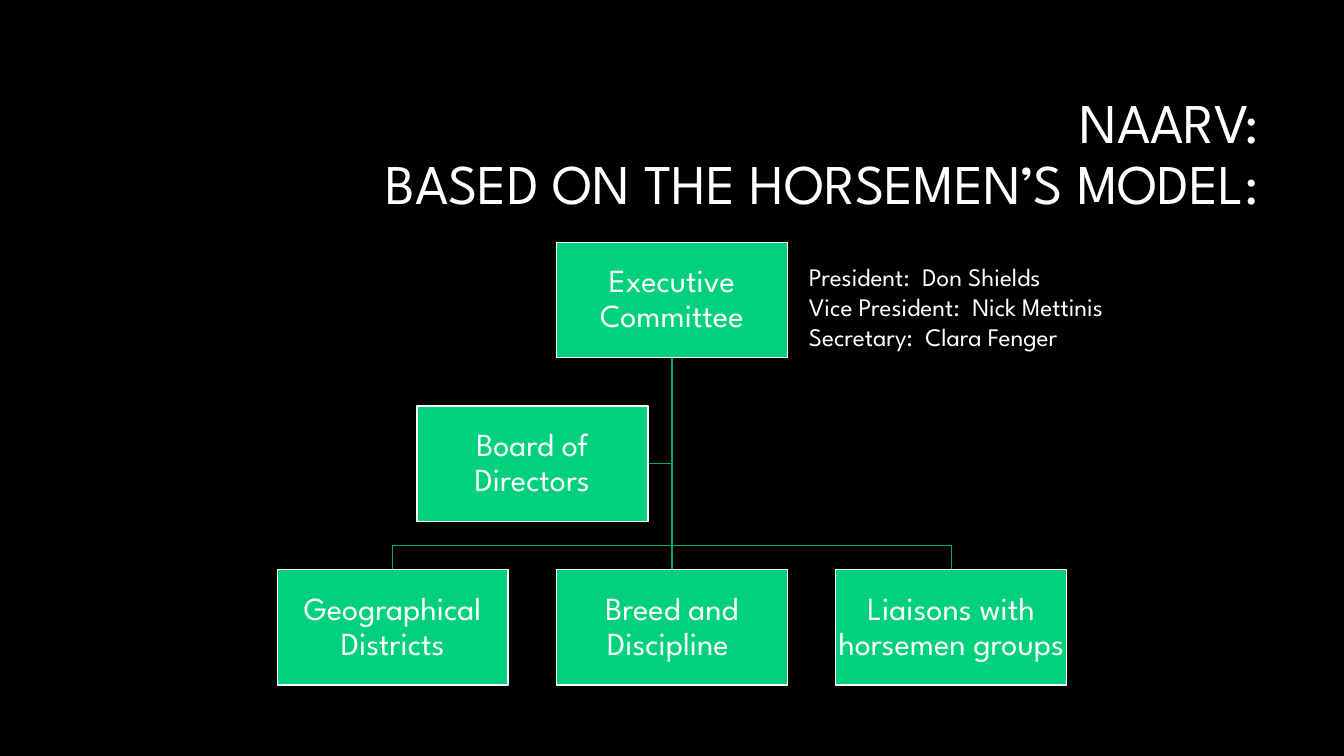
from dataclasses import dataclass

import pptx
import pptx.dml.color
import pptx.enum.shapes
import pptx.enum.text
import pptx.oxml.ns
import pptx.util
from lxml import etree
from pptx.shapes.base import BaseShape
from pptx.slide import Slide
from pptx.text.text import TextFrame

Pt = pptx.util.Pt
ALIGN = pptx.enum.text.PP_ALIGN
ANCHOR = pptx.enum.text.MSO_ANCHOR

COLORS = {"background": "000000", "box": "01D17D", "line": "01A764", "text": "FFFFFF"}
FONT = "League Spartan"

# Chart grid, in points
BOX_WIDTH, BOX_HEIGHT = 165, 82.4
CENTER_X, COLUMN_STEP = 480, 199.5
TOP_Y, ROW_STEP = 173, 117
BRANCH_RISE = 17.3


@dataclass(frozen=True)
class Box:
    text: str
    column: float
    row: int

    @property
    def center_x(self) -> float:
        return CENTER_X + self.column * COLUMN_STEP

    @property
    def left(self) -> float:
        return self.center_x - BOX_WIDTH / 2

    @property
    def top(self) -> float:
        return TOP_Y + self.row * ROW_STEP


COMMITTEE = Box("Executive Committee", 0, 0)
BOARD = Box("Board of Directors", -0.5, 1)
GROUPS = [
    Box("Geographical Districts", -1, 2),
    Box("Breed and Discipline ", 0, 2),
    Box("Liaisons with horsemen groups", 1, 2),
]
OFFICERS = [
    "President:  Don Shields",
    "Vice President:  Nick Mettinis",
    "Secretary:  Clara Fenger",
]


def color(name: str) -> pptx.dml.color.RGBColor:
    return pptx.dml.color.RGBColor.from_string(COLORS[name])


def write(frame: TextFrame, paragraphs: list[str], size: float, align: ALIGN,
          spacing: float = 1.0) -> None:
    """Fill a text frame; a newline inside a paragraph becomes a line break."""
    frame.word_wrap = True
    for index, text in enumerate(paragraphs):
        paragraph = frame.paragraphs[0] if index == 0 else frame.add_paragraph()
        paragraph.alignment = align
        paragraph.line_spacing = spacing
        for line_index, line in enumerate(text.split("\n")):
            if line_index:
                paragraph.add_line_break()
            run = paragraph.add_run()
            run.text = line
            run.font.name = FONT
            run.font.size = Pt(size)
            run.font.color.rgb = color("text")


def draw_line(slide: Slide, points: list[tuple[float, float]]) -> None:
    """Draw a straight connector, or an open outline when the line bends."""
    line: BaseShape
    if len(points) == 2:
        (x1, y1), (x2, y2) = points
        line = slide.shapes.add_connector(
            pptx.enum.shapes.MSO_CONNECTOR.STRAIGHT, Pt(x1), Pt(y1), Pt(x2), Pt(y2))
        etree.SubElement(line._element.spPr, pptx.oxml.ns.qn("a:effectLst"))
    else:
        corners = [(Pt(x), Pt(y)) for x, y in points]
        builder = slide.shapes.build_freeform(*corners[0])
        builder.add_line_segments(corners[1:], close=False)
        line = builder.convert_to_shape()
        line.shadow.inherit = False
        line.fill.background()
    line.line.color.rgb = color("line")
    line.line.width = Pt(1)


def draw_box(slide: Slide, box: Box) -> None:
    shape = slide.shapes.add_shape(
        pptx.enum.shapes.MSO_SHAPE.RECTANGLE,
        Pt(box.left), Pt(box.top), Pt(BOX_WIDTH), Pt(BOX_HEIGHT))
    shape.shadow.inherit = False
    shape.fill.solid()
    shape.fill.fore_color.rgb = color("box")
    shape.line.color.rgb = color("text")
    shape.line.width = Pt(1)
    frame = shape.text_frame
    frame.margin_left = frame.margin_right = Pt(1.2)
    frame.margin_top = frame.margin_bottom = Pt(1.2)
    frame.vertical_anchor = ANCHOR.MIDDLE
    write(frame, [box.text], 23, ALIGN.CENTER, 0.9)


def main() -> None:
    presentation = pptx.Presentation()
    presentation.slide_width = Pt(960)
    presentation.slide_height = Pt(540)
    slide = presentation.slides.add_slide(presentation.slide_layouts[6])
    slide.background.fill.solid()
    slide.background.fill.fore_color.rgb = color("background")

    # Title
    title = slide.shapes.add_textbox(Pt(159), Pt(60.5), Pt(747.5), Pt(101.5))
    title.text_frame.vertical_anchor = ANCHOR.MIDDLE
    write(title.text_frame, ["NAARV:\nBASED ON THE HORSEMEN’S MODEL:"],
          40, ALIGN.RIGHT, 0.9)

    # Lines from the committee to the board and the groups
    start = (CENTER_X, COMMITTEE.top + BOX_HEIGHT)
    board_y = BOARD.top + BOX_HEIGHT / 2
    draw_line(slide, [start, (CENTER_X, board_y), (BOARD.left + BOX_WIDTH, board_y)])
    for group in GROUPS:
        end = (group.center_x, group.top)
        branch_y = group.top - BRANCH_RISE
        bends = [(CENTER_X, branch_y), (group.center_x, branch_y)] if group.column else []
        draw_line(slide, [start, *bends, end])

    # Boxes
    for box in [COMMITTEE, *GROUPS, BOARD]:
        draw_box(slide, box)

    # Officers
    officers = slide.shapes.add_textbox(Pt(570.7), Pt(183), Pt(264), Pt(72.7))
    write(officers.text_frame, OFFICERS, 18, ALIGN.LEFT)

    presentation.save("out.pptx")


if __name__ == "__main__":
    main()
